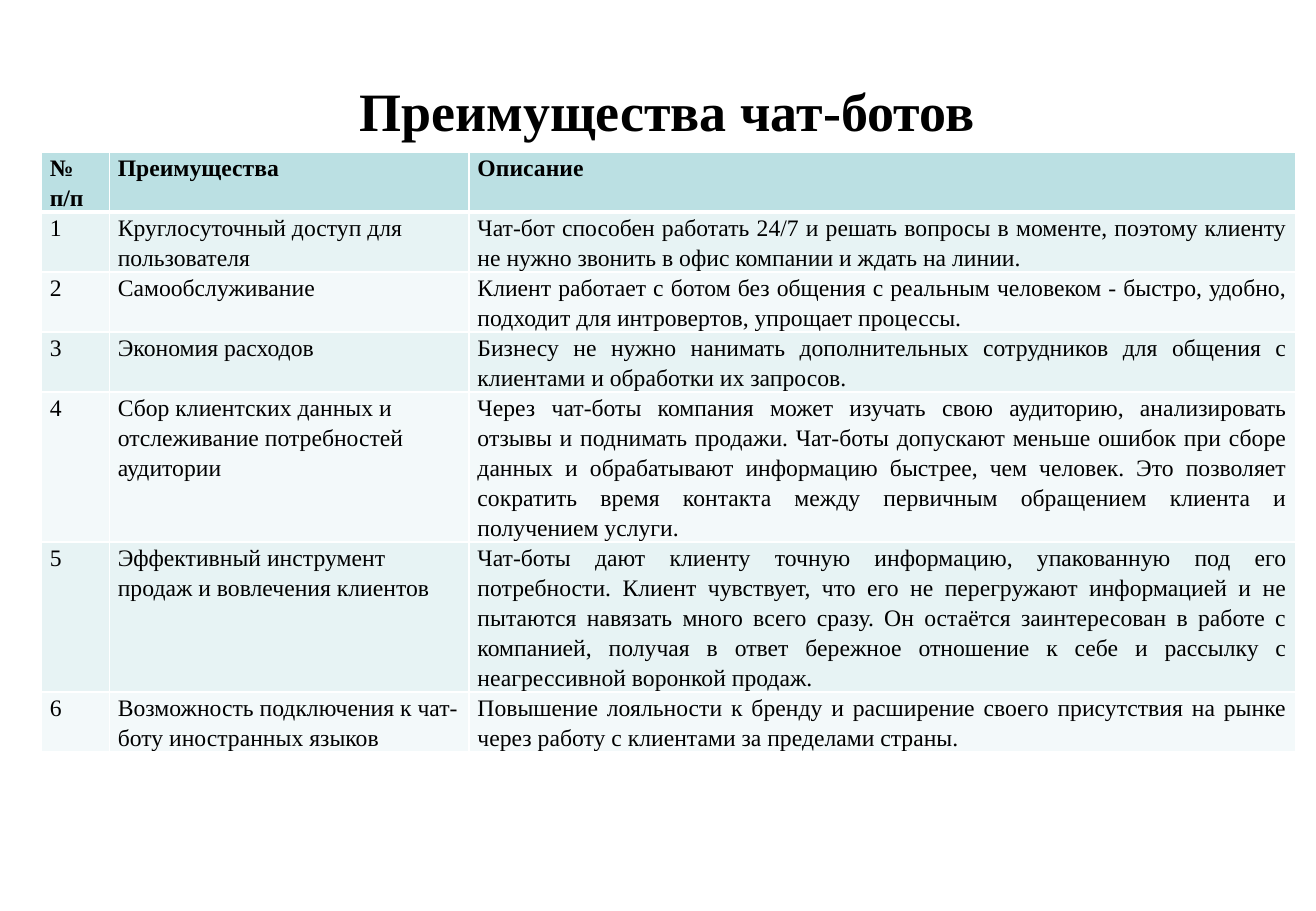
from lxml import etree
from pptx import Presentation
from pptx.dml.color import RGBColor
from pptx.enum.text import MSO_ANCHOR, PP_ALIGN
from pptx.oxml.ns import qn
from pptx.util import Inches, Pt

LEFT, CENTER, JUST = PP_ALIGN.LEFT, PP_ALIGN.CENTER, PP_ALIGN.JUSTIFY
MIDDLE = MSO_ANCHOR.MIDDLE
BLACK = RGBColor(0, 0, 0)
WHITE = RGBColor(0xFF, 0xFF, 0xFF)
HEAD = RGBColor(0xBB, 0xE0, 0xE3)
BANDS = (RGBColor(0xF3, 0xF9, 0xFA), RGBColor(0xE7, 0xF3, 0xF4))

# Content
TITLE = "Преимущества чат-ботов"
HEADS = ("№ п/п", "Преимущества", "Описание")
ITEMS = [
    ("Круглосуточный доступ для пользователя",
     "Чат-бот способен работать 24/7 и решать вопросы в моменте, поэтому "
     "клиенту не нужно звонить в офис компании и ждать на линии."),
    ("Самообслуживание",
     "Клиент работает с ботом без общения с реальным человеком - быстро, "
     "удобно, подходит для интровертов, упрощает процессы."),
    ("Экономия расходов",
     "Бизнесу не нужно нанимать дополнительных сотрудников для общения с "
     "клиентами и обработки их запросов."),
    ("Сбор клиентских данных и отслеживание потребностей аудитории",
     "Через чат-боты компания может изучать свою аудиторию, анализировать "
     "отзывы и поднимать продажи. Чат-боты допускают меньше ошибок при сборе "
     "данных и обрабатывают информацию быстрее, чем человек. Это позволяет "
     "сократить время контакта между первичным обращением клиента и "
     "получением услуги."),
    ("Эффективный инструмент продаж и вовлечения клиентов",
     "Чат-боты дают клиенту точную информацию, упакованную под его "
     "потребности. Клиент чувствует, что его не перегружают информацией и не "
     "пытаются навязать много всего сразу. Он остаётся заинтересован в работе "
     "с компанией, получая в ответ бережное отношение к себе и рассылку с "
     "неагрессивной воронкой продаж."),
    ("Возможность подключения к чат-боту иностранных языков",
     "Повышение лояльности к бренду и расширение своего присутствия на рынке "
     "через работу с клиентами за пределами страны."),
]
ROWS = [HEADS] + [(str(n), *item) for n, item in enumerate(ITEMS, 1)]
COLS = (0.56, 2.96, 6.8)
ROW_H = 0.41


def put(obj, **vals):
    for name, val in vals.items():
        setattr(obj, name, val)


def style(par, size, bold, align):
    par.alignment = align
    for run in par.runs:
        put(run.font, name="Times New Roman", size=Pt(size), bold=bold)
        run.font.color.rgb = BLACK


def edge(cell, side, width):
    props = cell._tc.get_or_add_tcPr()
    line = etree.SubElement(props, qn("a:ln" + side), w=str(Pt(width)))
    fill = etree.SubElement(line, qn("a:solidFill"))
    etree.SubElement(fill, qn("a:srgbClr"), val=str(WHITE))


deck = Presentation()
put(deck, slide_width=Inches(10.83), slide_height=Inches(7.5))
slide = deck.slides.add_slide(deck.slide_layouts[5])

# Title
title = slide.shapes.title
put(title, left=Inches(0.28), top=Inches(0.55),
    width=Inches(10.42), height=Inches(0.71))
title.text_frame.text = TITLE
put(title.text_frame, vertical_anchor=MIDDLE, word_wrap=True)
style(title.text_frame.paragraphs[0], 32, True, CENTER)

# Table
frame = slide.shapes.add_table(
    len(ROWS), len(COLS), Inches(0.34), Inches(1.25),
    Inches(sum(COLS)), Inches(ROW_H * len(ROWS)))
table = frame.table
for col, width in zip(table.columns, COLS):
    col.width = Inches(width)

for r, row in enumerate(ROWS):
    for c, text in enumerate(row):
        cell = table.cell(r, c)
        put(cell, text=text, margin_left=Inches(0.07),
            margin_right=Inches(0.07), margin_top=0, margin_bottom=0)
        par = cell.text_frame.paragraphs[0]
        par.line_spacing = 1.15
        style(par, 14, r == 0, JUST if r and c == 2 else LEFT)
        # A thick rule parts the header from the body
        for side in "LRTB":
            thick = (r, side) in ((0, "B"), (1, "T"))
            edge(cell, side, 3 if thick else 1)
        cell.fill.solid()
        cell.fill.fore_color.rgb = BANDS[r % 2] if r else HEAD

deck.save("out.pptx")
